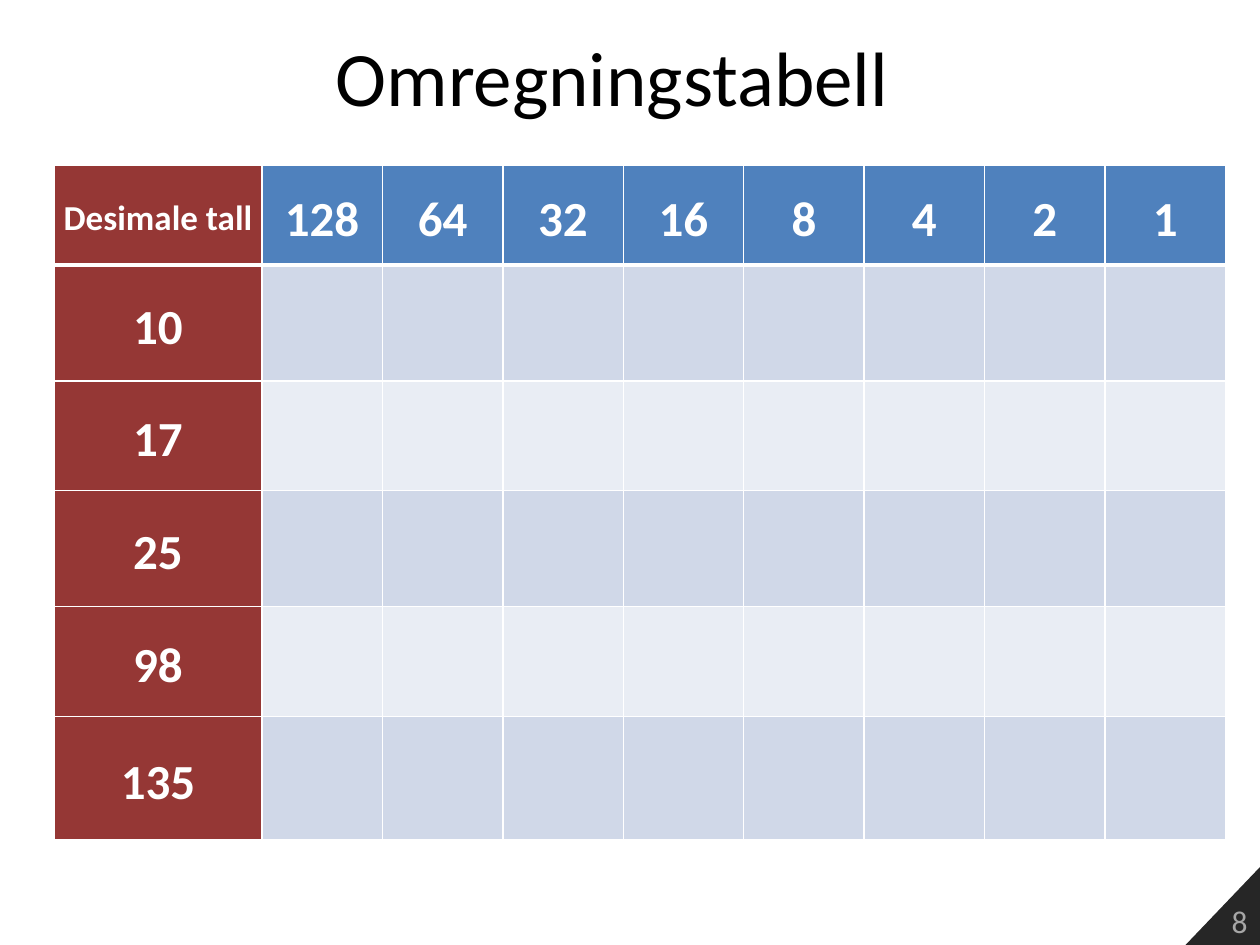
from lxml import etree
from pptx import Presentation
from pptx import util as u
from pptx.dml.color import RGBColor
from pptx.enum import text
from pptx.oxml.ns import qn

WHITE = RGBColor(0xFF, 0xFF, 0xFF)
BLACK = RGBColor(0x00, 0x00, 0x00)
RED = RGBColor(0x95, 0x37, 0x35)
BLUE = RGBColor(0x4F, 0x81, 0xBD)
BANDS = [RGBColor(0xD0, 0xD8, 0xE8), RGBColor(0xE9, 0xED, 0xF4)]
DARK = RGBColor(0x26, 0x26, 0x26)
GREY = RGBColor(0xA6, 0xA6, 0xA6)

PLACE_VALUES = [2 ** power for power in range(7, -1, -1)]
DECIMALS = [10, 17, 25, 98, 135]
ROW_HEIGHTS = [2.01, 2.34, 2.21, 2.34, 2.21, 2.49]
LABEL_WIDTH = 4.19


def set_all(target, values):
    for name, value in values.items():
        setattr(target, name, value)


def write(frame, words, size, color, align, bold=False, spacing=None):
    para = frame.paragraphs[0]
    set_all(para, {"alignment": align, "line_spacing": spacing})
    span = para.add_run()
    span.text = words
    set_all(span.font, {"name": "Calibri", "size": u.Pt(size), "bold": bold})
    span.font.color.rgb = color


def add_title(page, left, top, width, height):
    box = page.shapes.add_textbox(u.Cm(left), u.Cm(top), u.Cm(width), u.Cm(height))
    set_all(box.text_frame, {"word_wrap": True,
                             "vertical_anchor": text.MSO_ANCHOR.MIDDLE})
    write(box.text_frame, "Omregningstabell ", 44, BLACK, text.PP_ALIGN.CENTER)


def set_borders(cell, widths):
    # Border lines come before the fill in the cell properties
    properties = cell._tc.get_or_add_tcPr()
    for index, (side, width) in enumerate(widths.items()):
        line = etree.Element(qn(f"a:ln{side}"), w=str(u.Pt(width)))
        fill = etree.SubElement(line, qn("a:solidFill"))
        etree.SubElement(fill, qn("a:srgbClr"), val=str(WHITE))
        properties.insert(index, line)


def add_conversion_table(page, left, top, width):
    rows, columns = len(DECIMALS) + 1, len(PLACE_VALUES) + 1
    table = page.shapes.add_table(rows, columns, u.Cm(left), u.Cm(top),
                                  u.Cm(width), u.Cm(sum(ROW_HEIGHTS))).table
    for row, height in zip(table.rows, ROW_HEIGHTS):
        row.height = u.Cm(height)
    value_width = (width - LABEL_WIDTH) / len(PLACE_VALUES)
    for index, column in enumerate(table.columns):
        column.width = u.Cm(value_width if index else LABEL_WIDTH)

    grid = [["Desimale tall", *PLACE_VALUES]]
    grid += [[number] + [""] * len(PLACE_VALUES) for number in DECIMALS]
    for r, entries in enumerate(grid):
        for c, entry in enumerate(entries):
            cell = table.cell(r, c)
            cell.fill.solid()
            cell.fill.fore_color.rgb = (
                RED if c == 0 else BLUE if r == 0 else BANDS[(r - 1) % 2])
            set_borders(cell, {"L": 1, "R": 1, "T": 3 if r == 1 else 1,
                               "B": 3 if r == 0 else 1})
            set_all(cell, {"vertical_anchor": text.MSO_ANCHOR.MIDDLE,
                           "margin_left": u.Cm(0.17), "margin_right": u.Cm(0.17),
                           "margin_top": 0, "margin_bottom": 0})
            if entry != "":
                size = 20 if r == c == 0 else 28
                write(cell.text_frame, str(entry), size, WHITE,
                      text.PP_ALIGN.CENTER, bold=True, spacing=1.15)


def add_page_corner(page, left, top, width, height):
    right, bottom = u.Cm(left + width), u.Cm(top + height)
    builder = page.shapes.build_freeform(u.Cm(left), bottom)
    builder.add_line_segments([(right, u.Cm(top)), (right, bottom)], close=True)
    corner = builder.convert_to_shape()
    corner.shadow.inherit = False
    corner.fill.solid()
    corner.fill.fore_color.rgb = DARK
    corner.line.fill.background()
    set_all(corner.text_frame, {"vertical_anchor": text.MSO_ANCHOR.BOTTOM,
                                "word_wrap": True, "margin_left": 0,
                                "margin_top": 0, "margin_bottom": u.Cm(0.1)})
    write(corner.text_frame, "8", 18, GREY, text.PP_ALIGN.RIGHT)


def main():
    deck = Presentation()
    set_all(deck, {"slide_width": u.Cm(25.4), "slide_height": u.Cm(19.05)})
    page = deck.slides.add_slide(deck.slide_layouts[6])
    add_page_corner(page, 23.9, 17.48, 1.5, 1.57)
    add_title(page, 1.09, 0.33, 22.86, 2.39)
    add_conversion_table(page, 1.09, 3.33, 23.62)
    deck.save("out.pptx")


if __name__ == "__main__":
    main()
